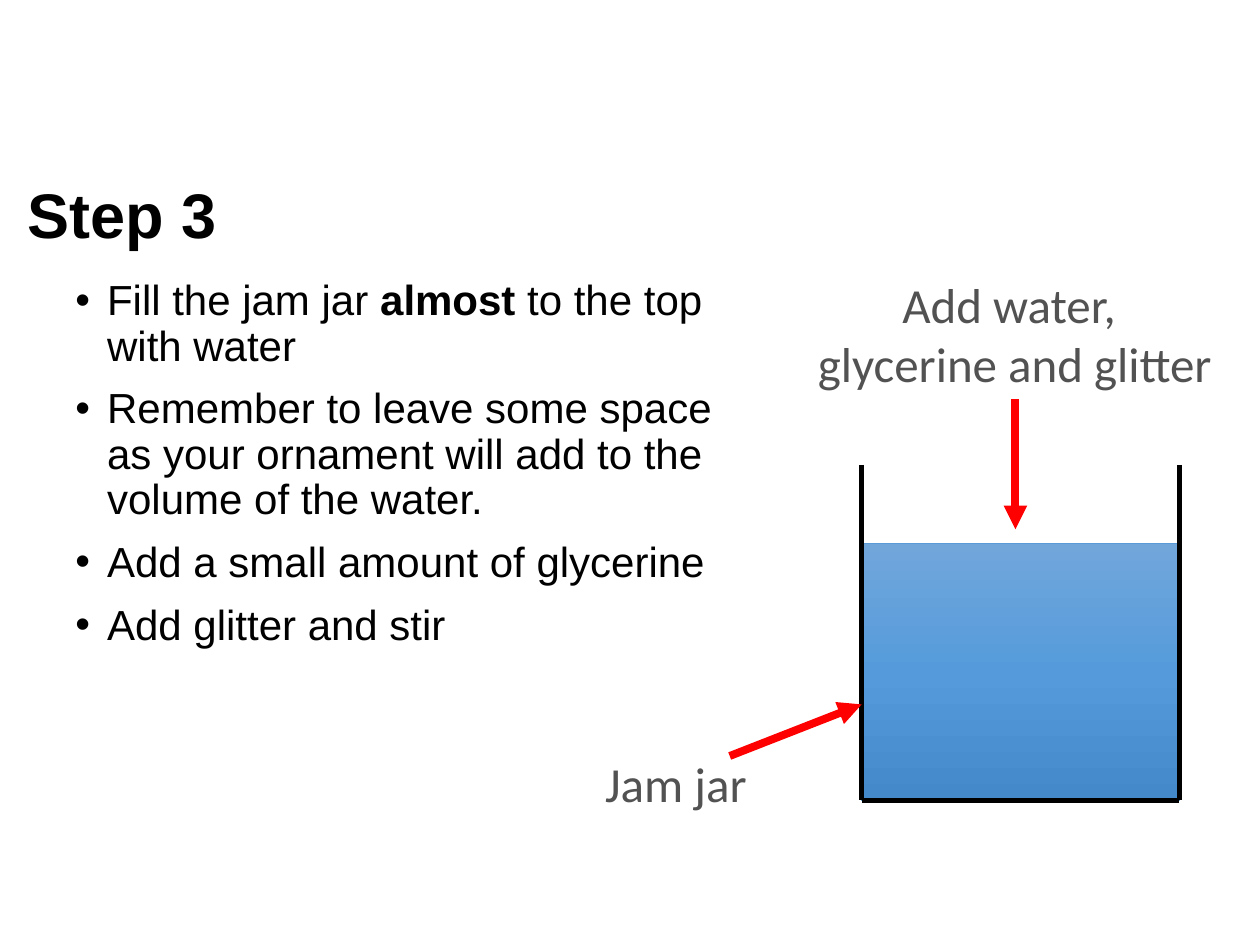
from copy import deepcopy

from pptx import Presentation
from pptx.dml.color import RGBColor
from pptx.enum.shapes import MSO_CONNECTOR as CONN, MSO_SHAPE as SHAPE
from pptx.enum.text import MSO_ANCHOR as ANCHOR, MSO_AUTO_SIZE as AUTO, PP_ALIGN as ALIGN
from pptx.oxml.ns import qn
from pptx.oxml.xmlchemy import OxmlElement
from pptx.util import Cm, Pt

BLACK = RGBColor(0x00, 0x00, 0x00)
GREY = RGBColor(0x52, 0x52, 0x52)
RED = RGBColor(0xFF, 0x00, 0x00)
WATER_LINE = RGBColor(0x5B, 0x9B, 0xD5)
WATER_TOP = RGBColor(0x71, 0xA6, 0xDB)
WATER_MIDDLE = RGBColor(0x55, 0x9B, 0xDB)
WATER_BOTTOM = RGBColor(0x44, 0x8A, 0xCA)

STEPS = [
    [("Fill the jam jar ", False), ("almost", True), (" to the top with water", False)],
    [("Remember to leave some space as your ornament will add to the volume of the water.", False)],
    [("Add a small amount of glycerine", False)],
    [("Add glitter and stir", False)],
]


def add_bullet(p):
    pPr = p._p.get_or_add_pPr()
    pPr.set("marL", str(Cm(0.64)))
    pPr.set("indent", str(-Cm(0.64)))
    for tag, key, value in (("a:buFont", "typeface", "Arial"), ("a:buChar", "char", "•")):
        bullet = OxmlElement(tag)
        bullet.set(key, value)
        pPr.append(bullet)


def write(tf, paragraphs, size=28, font="Calibri", color=GREY, align=ALIGN.CENTER,
          anchor=ANCHOR.TOP, spacing=None, before=0, bullets=False):
    tf.word_wrap = True
    tf.auto_size = AUTO.NONE
    tf.vertical_anchor = anchor
    for i, runs in enumerate(paragraphs):
        p = tf.add_paragraph() if i else tf.paragraphs[0]
        p.alignment = align
        p.line_spacing = spacing
        p.space_before = Pt(before if i else 0)
        if bullets:
            add_bullet(p)
        for text, bold in runs:
            r = p.add_run()
            r.text = text
            r.font.size, r.font.name, r.font.bold = Pt(size), font, bold
            r.font.color.rgb = color


def add_line(shapes, start, end, color, width, arrow=False):
    line = shapes.add_connector(CONN.STRAIGHT, *map(Cm, start + end))
    line.line.color.rgb = color
    line.line.width = Pt(width)
    if arrow:
        tail = OxmlElement("a:tailEnd")
        tail.set("type", "triangle")
        line.line._get_or_add_ln().append(tail)
    line.element.spPr.append(OxmlElement("a:effectLst"))


def add_title(s, x, y, w, h):
    sp = s.shapes.title
    sp.left, sp.top, sp.width, sp.height = map(Cm, (x, y, w, h))
    write(sp.text_frame, [[("Step 3", True)]], size=36, font="Arial", color=BLACK,
          align=ALIGN.LEFT, anchor=ANCHOR.MIDDLE, spacing=0.9)


def add_steps(s, x, y, w, h):
    sp = s.shapes.add_textbox(*map(Cm, (x, y, w, h)))
    write(sp.text_frame, STEPS, size=24, font="Arial", color=BLACK,
          align=ALIGN.LEFT, spacing=0.9, before=10, bullets=True)


def add_caption(s, x, y, w, h, lines):
    sp = s.shapes.add_textbox(*map(Cm, (x, y, w, h)))
    write(sp.text_frame, [[(line, False)] for line in lines])


def fill_with_water(sp):
    sp.fill.gradient()
    sp.fill.gradient_angle = 270
    stops = sp.element.spPr.find(qn("a:gradFill")).find(qn("a:gsLst"))
    stops.insert(1, deepcopy(stops[0]))
    colors = (WATER_TOP, WATER_MIDDLE, WATER_BOTTOM)
    for stop, position, color in zip(sp.fill.gradient_stops, (0, 0.5, 1), colors):
        stop.position = position
        stop.color.rgb = color


def add_jar(s, x, y, w, h, gap):
    jar = s.shapes.add_group_shape().shapes
    water = jar.add_shape(SHAPE.RECTANGLE, *map(Cm, (x, y + gap, w, h - gap)))
    water.shadow.inherit = False
    fill_with_water(water)
    water.line.color.rgb = WATER_LINE
    water.line.width = Pt(0.5)
    right, bottom = x + w, y + h
    for start, end in (((x, y), (x, bottom)),
                       ((right, y), (right, bottom)),
                       ((x, bottom), (right, bottom))):
        add_line(jar, start, end, BLACK, 3)


def main():
    prs = Presentation()
    prs.slide_width, prs.slide_height = Cm(25.4), Cm(19.05)
    s = prs.slides.add_slide(prs.slide_layouts[5])
    add_title(s, 0.3, 3.3, 24.8, 2.21)
    add_steps(s, 1.27, 5.51, 13.44, 9.53)
    add_caption(s, 15.82, 5.41, 9.27, 2.64, ["Add water, ", "glycerine and glitter"])
    add_caption(s, 11.02, 15.06, 5.21, 1.45, ["Jam jar"])
    add_jar(s, 17.37, 9.37, 6.4, 6.76, gap=1.58)
    add_line(s.shapes, (20.47, 8.05), (20.47, 10.67), RED, 4.5, arrow=True)
    add_line(s.shapes, (14.71, 15.24), (17.37, 14.2), RED, 4.5, arrow=True)
    prs.save("out.pptx")


if __name__ == "__main__":
    main()
